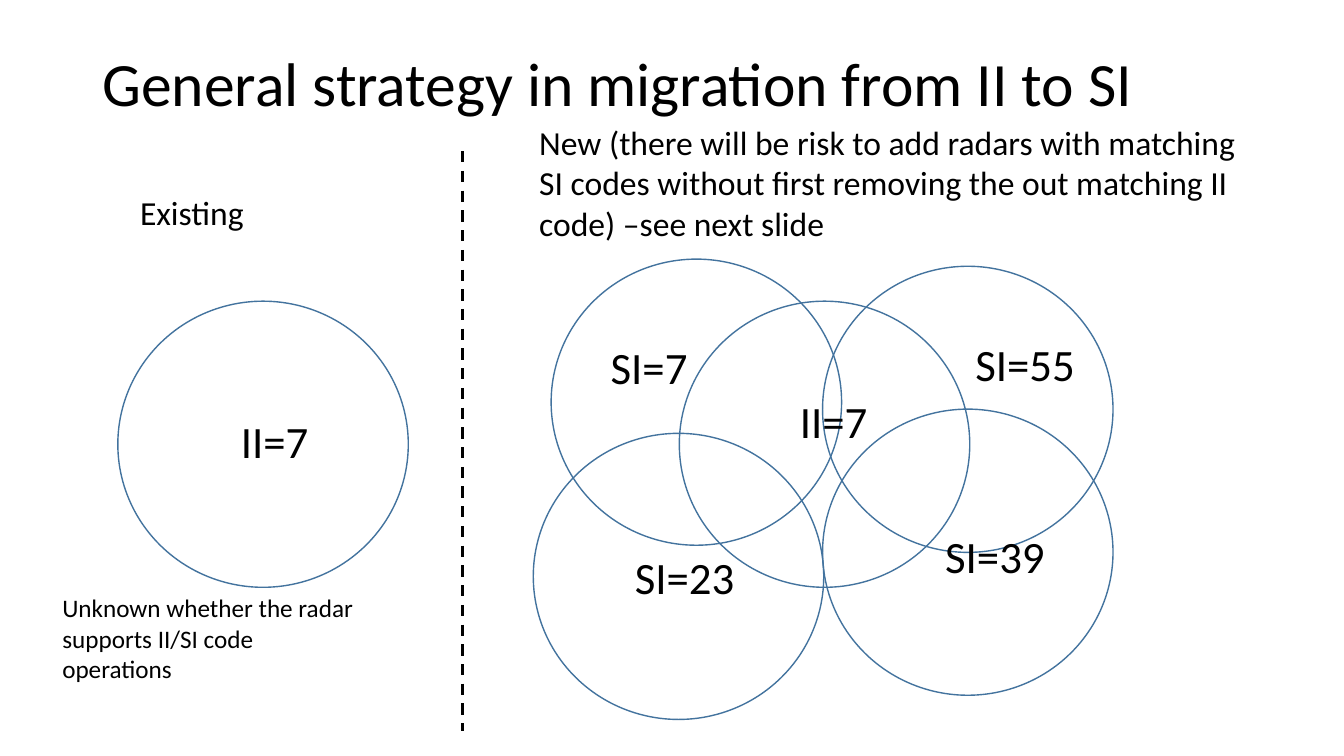
import pptx
import pptx.util
import pptx.dml.color
import pptx.enum.dml
import pptx.enum.shapes
import pptx.enum.text
from dataclasses import dataclass
from pptx.util import Cm


@dataclass(frozen=True)
class Theme:
    font: str = "Calibri"
    ink: str = "000000"
    ring: str = "43739E"
    title: int = 44
    code: int = 32
    head: int = 24
    note: int = 18


THEME = Theme()
CIRCLE = (7.32, 7.21)
LABEL = (3.4, 1.63)


def color(code):
    return pptx.dml.color.RGBColor.from_string(code)


def style(item, values):
    for name, value in values.items():
        setattr(item, name, value)


def write(frame, words, size, anchor=pptx.enum.text.MSO_ANCHOR.TOP):
    style(frame, {
        "text": words,
        "word_wrap": True,
        "auto_size": pptx.enum.text.MSO_AUTO_SIZE.NONE,
        "vertical_anchor": anchor,
    })
    line = frame.paragraphs[0]
    line.alignment = pptx.enum.text.PP_ALIGN.LEFT
    font = line.runs[0].font
    style(font, {"name": THEME.font, "size": pptx.util.Pt(size)})
    font.color.rgb = color(THEME.ink)


def add_text(slide, box, words, size):
    area = slide.shapes.add_textbox(*map(Cm, box))
    write(area.text_frame, words, size)


def add_ring(slide, left, top):
    ring = slide.shapes.add_shape(
        pptx.enum.shapes.MSO_SHAPE.OVAL, *map(Cm, (left, top, *CIRCLE)))
    ring.shadow.inherit = False
    ring.fill.background()
    ring.line.color.rgb = color(THEME.ring)
    ring.line.width = pptx.util.Pt(1)


def add_title(slide, box):
    title = slide.shapes.title
    style(title, dict(zip(("left", "top", "width", "height"), map(Cm, box))))
    write(title.text_frame, "General strategy in migration from II to SI",
          THEME.title, pptx.enum.text.MSO_ANCHOR.MIDDLE)
    title.text_frame.paragraphs[0].line_spacing = 0.9


def add_split(slide, left, top, end):
    split = slide.shapes.add_connector(
        pptx.enum.shapes.MSO_CONNECTOR.STRAIGHT,
        *map(Cm, (left, top, left, end)))
    split.line.color.rgb = color(THEME.ink)
    style(split.line, {
        "width": pptx.util.Pt(2),
        "dash_style": pptx.enum.dml.MSO_LINE.DASH,
    })
    pptx.oxml.xmlchemy.OxmlElement
    split._element.spPr.append(pptx.oxml.parse_xml(
        '<a:effectLst xmlns:a='
        '"http://schemas.openxmlformats.org/drawingml/2006/main"/>'))


def add_old(slide, box):
    left, top, width, height = box
    add_ring(slide, left + 1.65, top + 2.89)
    add_text(slide, (left + 4.5, top + 5.61, *LABEL), "II=7", THEME.code)
    add_text(slide, (left + 1.96, top, 6.73, 1.27), "Existing", THEME.head)
    add_text(slide, (left, top + height - 2.57, width, 2.57),
             "Unknown whether the radar supports II/SI code operations",
             THEME.note)


def add_new(slide, box):
    left, top, width, height = box
    rings = [(3.78, 4.64), (7.39, 3.76), (7.39, 7.36),
             (0.1, height - CIRCLE[1]), (0.55, 3.58)]
    codes = [("SI=7", 1.8, 5.48), ("SI=23", 2.41, 10.79),
             ("SI=55", 10.99, 5.41), ("SI=39", 10.23, 10.26),
             ("II=7", 6.57, 6.85)]
    for x, y in rings:
        add_ring(slide, left + x, top + y)
    for words, x, y in codes:
        add_text(slide, (left + x, top + y, *LABEL), words, THEME.code)
    add_text(slide, (left, top, width, 3.33),
             "New (there will be risk to add radars with matching SI codes "
             "without first removing the out matching II code) "
             "–see next slide", THEME.head)


def main():
    deck = pptx.Presentation()
    style(deck, {"slide_width": Cm(33.87), "slide_height": Cm(19.05)})
    slide = deck.slides.add_slide(deck.slide_layouts[5])
    add_title(slide, (2.33, 0.33, 29.21, 3.68))
    add_old(slide, (1.32, 4.7, 8.08, 12.68))
    add_split(slide, 11.66, 3.81, 18.42)
    add_new(slide, (13.34, 2.95, 18.21, 15.18))
    deck.save("out.pptx")


if __name__ == "__main__":
    main()
